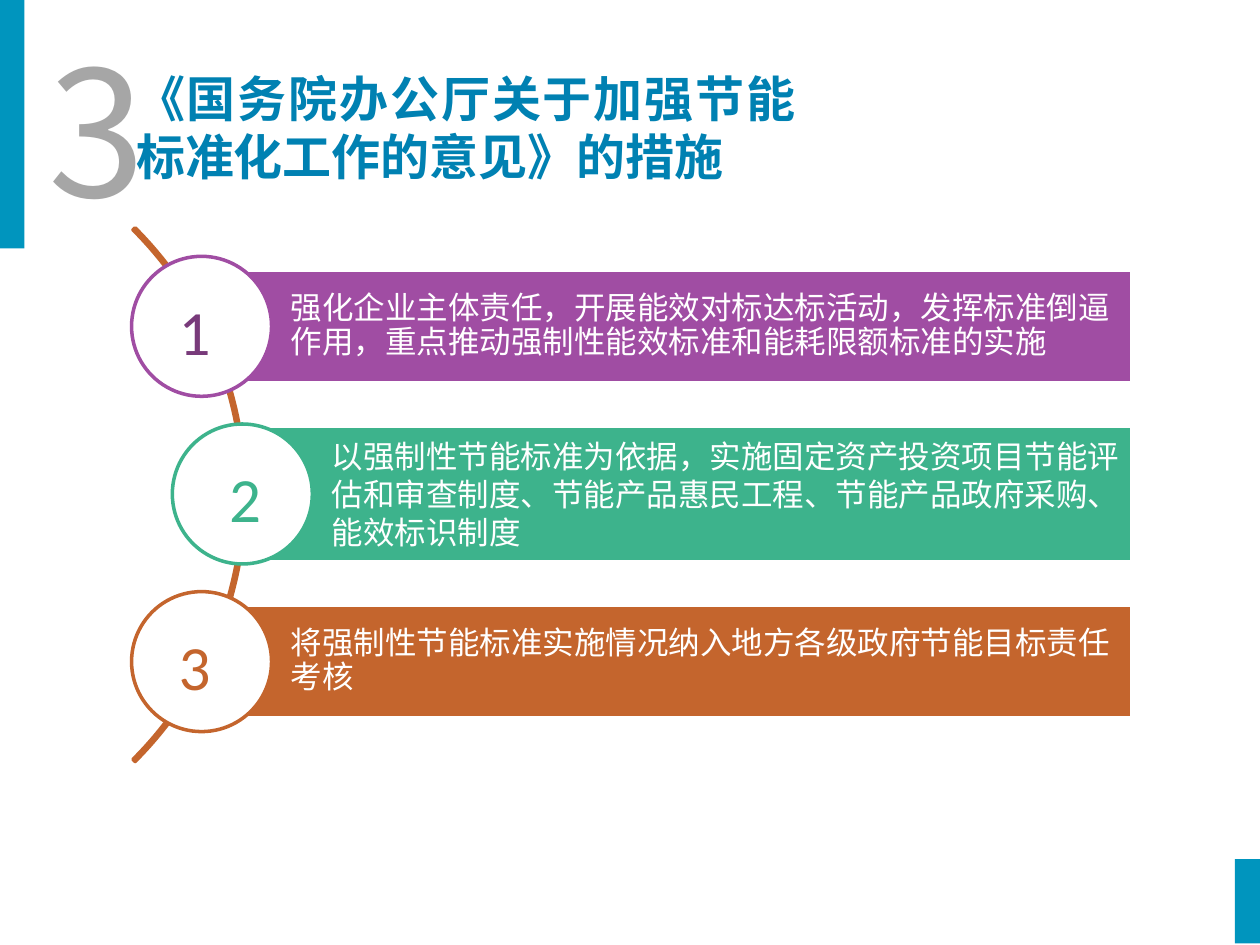
import pptx
import pptx.util
import pptx.dml.color
import pptx.enum.shapes
import pptx.enum.text

Pt = pptx.util.Pt
SHAPES = pptx.enum.shapes.MSO_SHAPE
ANCHOR = pptx.enum.text.MSO_ANCHOR
ALIGN = pptx.enum.text.PP_ALIGN


def add_shape(kind, box, fill=None, line=None):
    shape = slide.shapes.add_shape(kind, *[Pt(length) for length in box])
    shape.shadow.inherit = False
    for part, color in ((shape.fill, fill), (shape.line.fill, line)):
        if color:
            part.solid()
            part.fore_color.rgb = pptx.dml.color.RGBColor.from_string(color)
        else:
            part.background()
    if line:
        shape.line.width = Pt(2)
    return shape


def write_text(shape, text, size, color, frame_format=None, paragraph_format=None, **font_format):
    frame = shape.text_frame
    frame.text = text
    paragraph = frame.paragraphs[0]
    font = paragraph.runs[0].font
    font.color.rgb = pptx.dml.color.RGBColor.from_string(color)
    frame_values = {"word_wrap": True, "vertical_anchor": ANCHOR.TOP,
                    "auto_size": pptx.enum.text.MSO_AUTO_SIZE.NONE, **(frame_format or {})}
    paragraph_values = {"alignment": ALIGN.LEFT, **(paragraph_format or {})}
    font_values = {"name": "Calibri", "size": Pt(size), **font_format}
    for target, values in ((frame, frame_values), (paragraph, paragraph_values), (font, font_values)):
        for name, value in values.items():
            setattr(target, name, value)


presentation = pptx.Presentation()
presentation.slide_width = Pt(720)
presentation.slide_height = Pt(540)
slide = presentation.slides.add_slide(presentation.slide_layouts[5])

for accent_box in ((705.6, 491, 14.4, 48.2), (-5, -8, 18.9, 150)):
    add_shape(SHAPES.RECTANGLE, accent_box, "0095BE")

title = slide.shapes.title
title_place = {"left": 70.6, "top": 35.3, "width": 391, "height": 75}
for name, value in title_place.items():
    setattr(title, name, Pt(value))
write_text(title, "《国务院办公厅关于加强节能标准化工作的意见》的措施", 28, "0081B2",
           paragraph_format={"alignment": ALIGN.JUSTIFY}, bold=True)

section_number = slide.shapes.add_textbox(Pt(20.9), Pt(9.4), Pt(37.4), Pt(127.4))
write_text(section_number, "3", 100, "A6A6A6", name="Noto Sans CJK SC")

arc = add_shape(SHAPES.BLOCK_ARC, (-290.9, 67, 431.3, 431.3), line="C4652D")
for index, value in enumerate((189, 27, 0.004)):
    arc.adjustments[index] = value

measures = [
    ("强化企业主体责任，开展能效对标达标活动，发挥标准倒逼作用，重点推动强制性能效标准和能耗限额标准的实施",
     "A04DA3", "783A7A", 115.2, 64, 95, 0.9),
    ("以强制性节能标准为依据，实施固定资产投资项目节能评估和审查制度、节能产品惠民工程、节能产品政府采购、能效标识制度",
     "3DB38C", "3DB38C", 138.5, 77, 123.8, 1),
    ("将强制性节能标准实施情况纳入地方各级政府节能目标责任考核",
     "C4652D", "C4652D", 115.2, 64, 95, 0.9),
]
first_center = 186.5
center_step = 95.8
bar_right = 646.6
circle_size = 80
number_height = 51

for index, (text, color, number_color, bar_left, bar_height, number_left, spacing) in enumerate(measures):
    center = first_center + index * center_step
    bar = add_shape(SHAPES.RECTANGLE, (bar_left, center - bar_height / 2, bar_right - bar_left, bar_height),
                    color, "FFFFFF")
    write_text(bar, text, 18, "FFFFFF",
               {"vertical_anchor": ANCHOR.MIDDLE, "margin_left": Pt(51), "margin_right": Pt(3.6),
                "margin_top": Pt(3.6), "margin_bottom": Pt(3.6)},
               {"line_spacing": spacing})
    add_shape(SHAPES.OVAL, (bar_left - circle_size / 2, center - circle_size / 2, circle_size, circle_size),
              "FFFFFF", color)
    number = slide.shapes.add_textbox(Pt(number_left), Pt(center - number_height / 2 + 2.5),
                                      Pt(39.6), Pt(number_height))
    write_text(number, str(index + 1), 36, number_color)

presentation.save("out.pptx")
